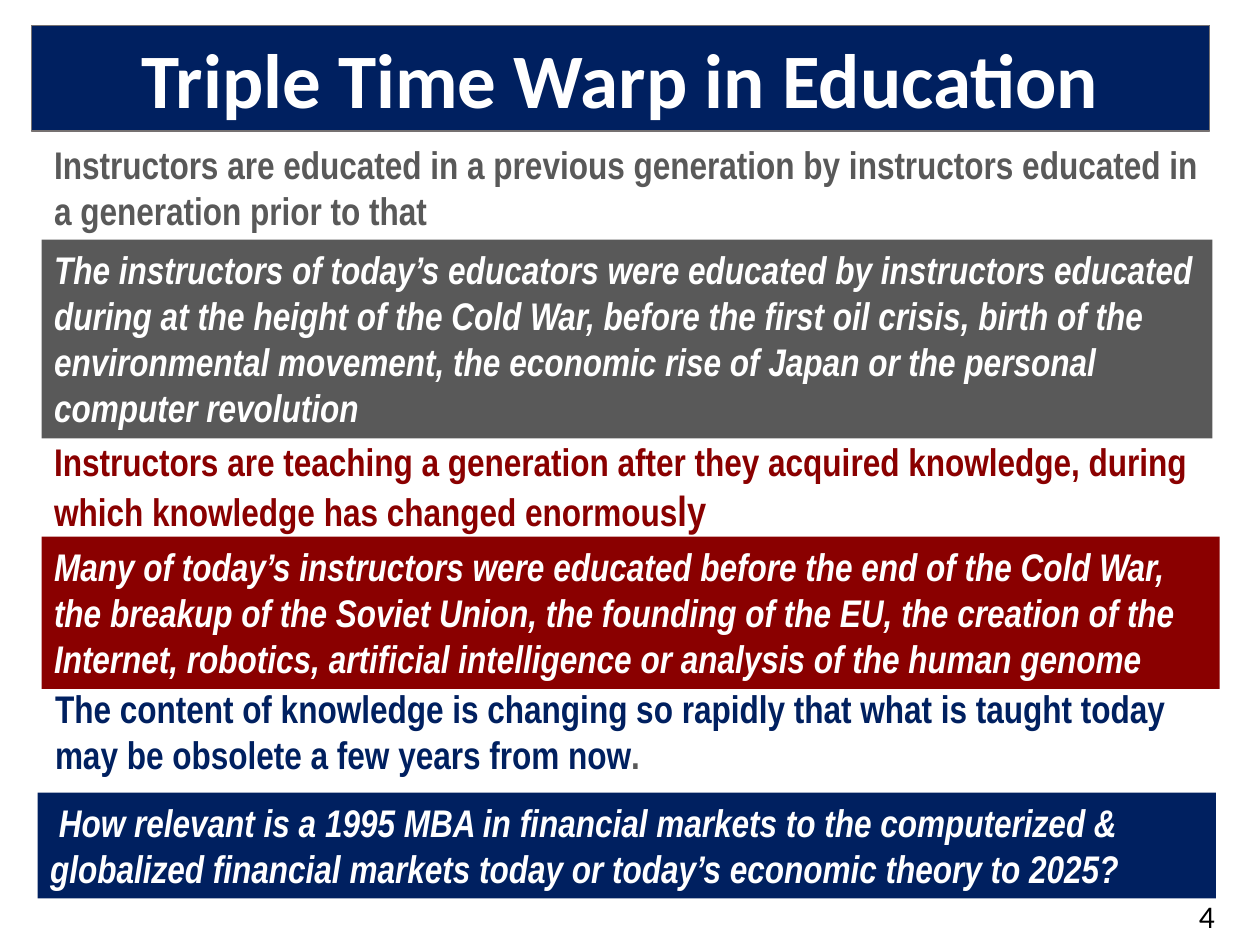
from dataclasses import dataclass
from typing import Optional

from pptx import Presentation
from pptx.dml.color import RGBColor
from pptx.enum.shapes import MSO_SHAPE
from pptx.enum.text import MSO_ANCHOR, MSO_AUTO_SIZE, PP_ALIGN
from pptx.util import Cm, Pt


@dataclass(frozen=True)
class Theme:
    navy: str = "002060"
    gray: str = "595959"
    red: str = "8A0000"
    white: str = "FFFFFF"
    black: str = "000000"
    outline: str = "767171"
    heading_font: str = "Calibri"
    body_font: str = "Arial Narrow"
    title_size: int = 44
    body_size: int = 22
    ending_size: int = 24
    number_size: int = 18


THEME = Theme()


@dataclass(frozen=True)
class TextStyle:
    color: str
    size: int = THEME.body_size
    font: str = THEME.body_font
    bold: bool = True
    italic: bool = False
    align: PP_ALIGN = PP_ALIGN.LEFT


@dataclass(frozen=True)
class Ending:
    """Last characters of a text, formatted differently."""
    text: str
    style: TextStyle


@dataclass(frozen=True)
class Block:
    """A text area in centimetres; a fill makes it a banner."""
    left: float
    top: float
    width: float
    height: float
    text: str
    style: TextStyle
    fill: Optional[str] = None
    line: Optional[str] = None
    space_after: int = 0
    ending: Optional[Ending] = None


EXAMPLE = TextStyle(THEME.white, italic=True)

BLOCKS = [
    # Title
    Block(0.64, 0.51, 23.75, 2.13, "Triple Time Warp in Education",
          TextStyle(THEME.white, THEME.title_size, THEME.heading_font,
                    align=PP_ALIGN.CENTER),
          fill=THEME.navy, line=THEME.outline),
    # Example banners
    Block(0.84, 4.83, 23.6, 4.01,
          "The instructors of today’s educators were educated by instructors "
          "educated during at the height of the Cold War, before the first oil "
          "crisis, birth of the environmental movement, the economic rise of "
          "Japan or the personal computer revolution",
          EXAMPLE, fill=THEME.gray),
    Block(0.84, 10.82, 23.75, 3.07,
          "Many of today’s instructors were educated before the end of the Cold "
          "War, the breakup of the Soviet Union, the founding of the EU, the "
          "creation of the Internet, robotics, artificial intelligence or "
          "analysis of the human genome",
          EXAMPLE, fill=THEME.red, space_after=6),
    Block(0.76, 15.98, 23.75, 2.13,
          " How relevant is a 1995 MBA in financial markets to the computerized "
          "& globalized financial markets today or today’s economic theory to "
          "2025?",
          EXAMPLE, fill=THEME.navy),
    # Statements
    Block(0.84, 2.72, 23.57, 2.9,
          "Instructors are educated in a previous generation by instructors "
          "educated in a generation prior to that",
          TextStyle(THEME.gray)),
    Block(0.84, 8.71, 23.75, 3.07,
          "Instructors are teaching a generation after they acquired knowledge, "
          "during which knowledge has changed enormous",
          TextStyle(THEME.red),
          ending=Ending("ly", TextStyle(THEME.red, THEME.ending_size))),
    Block(0.86, 13.69, 23.57, 2.9,
          "The content of knowledge is changing so rapidly that what is taught "
          "today may be obsolete a few years from now",
          TextStyle(THEME.navy),
          ending=Ending(".", TextStyle(THEME.gray))),
    # Slide number
    Block(19.89, 17.96, 4.85, 1.02, "4",
          TextStyle(THEME.black, THEME.number_size, THEME.heading_font,
                    bold=False, align=PP_ALIGN.RIGHT)),
]


def format_run(run, style: TextStyle) -> None:
    run.font.name = style.font
    run.font.size = Pt(style.size)
    run.font.bold = style.bold
    run.font.italic = style.italic
    run.font.color.rgb = RGBColor.from_string(style.color)


def add_frame(slide, block: Block):
    box = [Cm(value) for value in
           (block.left, block.top, block.width, block.height)]
    if block.fill is None:
        return slide.shapes.add_textbox(*box)
    shape = slide.shapes.add_shape(MSO_SHAPE.RECTANGLE, *box)
    shape.shadow.inherit = False
    shape.fill.solid()
    shape.fill.fore_color.rgb = RGBColor.from_string(block.fill)
    if block.line is None:
        shape.line.fill.background()
    else:
        shape.line.color.rgb = RGBColor.from_string(block.line)
        shape.line.width = Pt(0.75)
    return shape


def add_block(slide, block: Block) -> None:
    text_frame = add_frame(slide, block).text_frame
    text_frame.word_wrap = True
    text_frame.auto_size = MSO_AUTO_SIZE.SHAPE_TO_FIT_TEXT
    text_frame.vertical_anchor = MSO_ANCHOR.TOP
    paragraph = text_frame.paragraphs[0]
    paragraph.text = block.text
    paragraph.alignment = block.style.align
    paragraph.space_after = Pt(block.space_after)
    format_run(paragraph.runs[0], block.style)
    if block.ending is not None:
        run = paragraph.add_run()
        run.text = block.ending.text
        format_run(run, block.ending.style)


def main() -> None:
    presentation = Presentation()
    presentation.slide_width = Cm(25.4)
    presentation.slide_height = Cm(19.05)
    slide = presentation.slides.add_slide(presentation.slide_layouts[6])
    for block in BLOCKS:
        add_block(slide, block)
    presentation.save("out.pptx")


if __name__ == "__main__":
    main()
